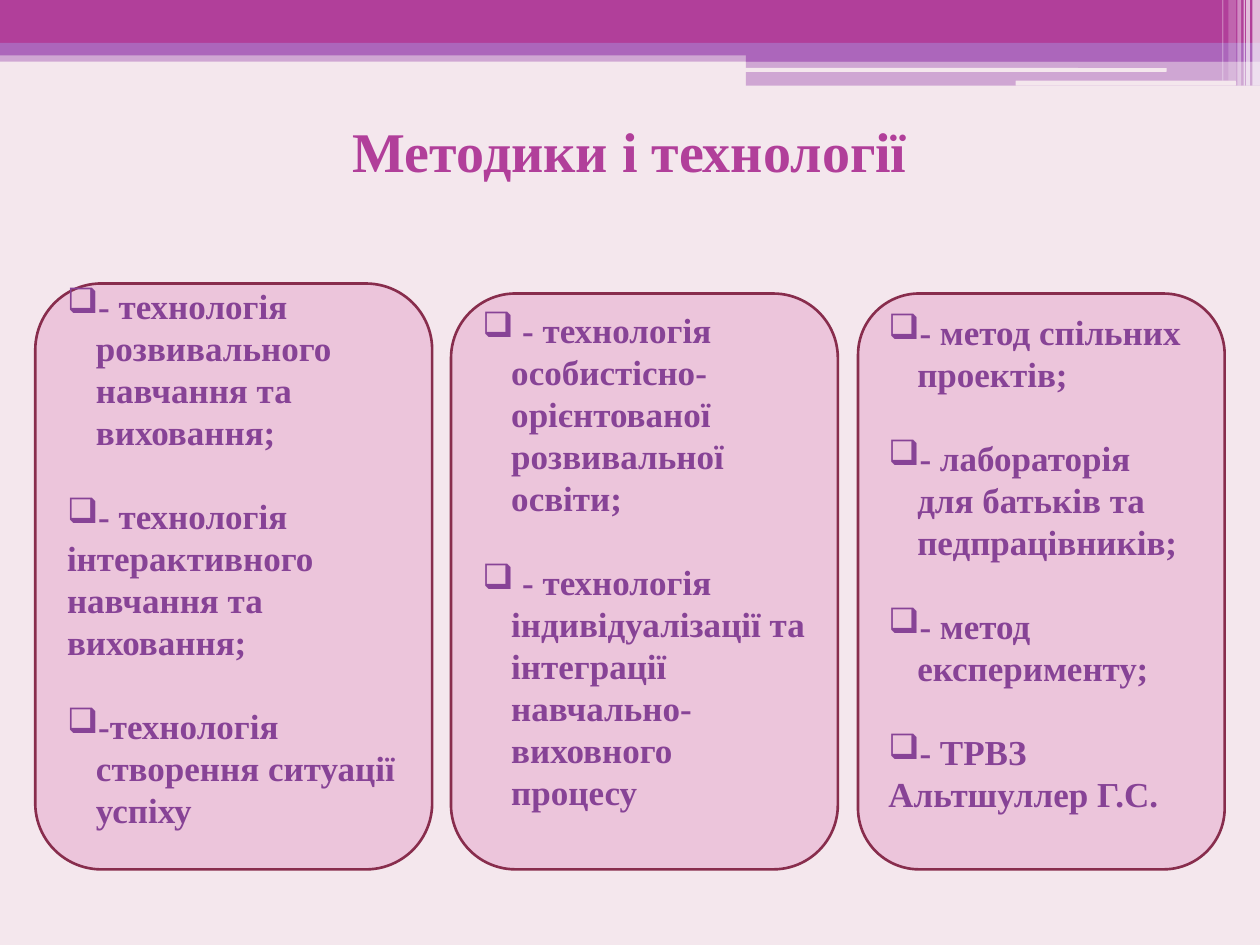
"""Build the slide about teaching methods and technologies."""
from lxml import etree
from pptx import Presentation
from pptx import util as u
from pptx.dml.color import RGBColor
from pptx.enum import shapes, text
from pptx.oxml import ns

BACKGROUND = RGBColor(0xF4, 0xE7, 0xED)
MAGENTA = RGBColor(0xB1, 0x3F, 0x9A)
LILAC = RGBColor(0xAC, 0x66, 0xBB)
WHITE = RGBColor(0xFF, 0xFF, 0xFF)
CARD_FILL = RGBColor(0xEC, 0xC5, 0xDB)
CARD_LINE = RGBColor(0x88, 0x2D, 0x4D)
CARD_TEXT = RGBColor(0x87, 0x43, 0x96)
FONT = "Times New Roman"
HANGING = u.Inches(0.23)
BULLET = "❑"

BANDS = [
    ((0, 0.4, 10, 0.09), LILAC, 50),
    ((0, 0, 10, 0.34), MAGENTA, 100),
    ((0, 0.34, 10, 0.1), LILAC, 100),
    ((5.92, 0.39, 4.08, 0.1), LILAC, 100),
    ((5.92, 0.48, 4.08, 0.2), LILAC, 50),
]
SLOTS = [(5.91, 0.54, 3.35, 0.03), (8.06, 0.64, 1.75, 0.04)]
STRIPES = [
    (9.94, 0.06, 0.68, 65),
    (9.89, 0.03, 0.68, 65),
    (9.87, 0.01, 0.68, 60),
    (9.82, 0.03, 0.68, 40),
    (9.75, 0.06, 0.64, 20),
    (9.7, 0.01, 0.64, 30),
]

# Each paragraph: wording, has a bullet, is followed by a gap
CARDS = [
    ((0.28, 2.25, 3.15, 4.65), 0.35, [
        ("- технологія розвивального навчання та виховання;", True, True),
        ("- технологія", True, False),
        ("інтерактивного навчання та виховання;", False, True),
        ("-технологія створення ситуації успіху", True, False),
    ]),
    ((3.58, 2.33, 3.07, 4.57), 0.38, [
        (" - технологія особистісно-орієнтованої розвивальної освіти;", True, True),
        (" - технологія індивідуалізації та інтеграції навчально-виховного процесу",
         True, False),
    ]),
    ((6.81, 2.33, 2.91, 4.57), 0.35, [
        ("- метод спільних проектів;", True, True),
        ("- лабораторія для батьків та педпрацівників;", True, True),
        ("- метод експерименту;", True, True),
        ("- ТРВЗ", True, False),
        ("Альтшуллер Г.С.", False, False),
    ]),
]


def write(paragraph, wording, size=20, color=CARD_TEXT, align=text.PP_ALIGN.LEFT,
          bullet=False, gap=0, spacing=1.0):
    """Fill a paragraph with one bold run and format it."""
    paragraph.alignment = align
    paragraph.line_spacing = spacing
    paragraph.space_after = u.Pt(gap)
    run = paragraph.add_run()
    run.text = wording
    run.font.name = FONT
    run.font.size = u.Pt(size)
    run.font.bold = True
    run.font.color.rgb = color
    if bullet:
        properties = paragraph._p.get_or_add_pPr()
        properties.set("marL", str(HANGING))
        properties.set("indent", str(-HANGING))
        etree.SubElement(properties, ns.qn("a:buChar")).set("char", BULLET)


class SlideBuilder:
    """Hold the style and the current slide."""

    def __init__(self, slide):
        self.slide = slide
        slide.background.fill.solid()
        slide.background.fill.fore_color.rgb = BACKGROUND

    def block(self, box, color, opacity=100, rounded=False):
        """Add a plain filled rectangle."""
        kind = shapes.MSO_SHAPE.ROUNDED_RECTANGLE if rounded else shapes.MSO_SHAPE.RECTANGLE
        shape = self.slide.shapes.add_shape(kind, *map(u.Inches, box))
        shape.shadow.inherit = False
        shape.fill.solid()
        shape.fill.fore_color.rgb = color
        shape.line.fill.background()
        if opacity < 100:
            tint = shape.fill._xPr.find(".//" + ns.qn("a:srgbClr"))
            etree.SubElement(tint, ns.qn("a:alpha")).set("val", str(opacity * 1000))
        return shape

    def title(self, box, wording):
        """Add the centred heading."""
        frame = self.slide.shapes.add_textbox(*map(u.Inches, box)).text_frame
        frame.word_wrap = True
        frame.vertical_anchor = text.MSO_ANCHOR.MIDDLE
        write(frame.paragraphs[0], wording, size=32, color=MAGENTA,
              align=text.PP_ALIGN.CENTER)

    def card(self, box, bottom, paragraphs):
        """Add a rounded card with a bulleted list."""
        shape = self.block(box, CARD_FILL, rounded=True)
        shape.line.color.rgb = CARD_LINE
        shape.line.width = u.Pt(1.5)
        frame = shape.text_frame
        frame.word_wrap = True
        frame.vertical_anchor = text.MSO_ANCHOR.MIDDLE
        frame.margin_bottom = u.Inches(bottom)
        for index, (wording, bullet, gap) in enumerate(paragraphs):
            paragraph = frame.add_paragraph() if index else frame.paragraphs[0]
            write(paragraph, wording, bullet=bullet, gap=24 if gap else 0, spacing=u.Pt(24))


def main():
    """Create the presentation and save it."""
    presentation = Presentation()
    presentation.slide_width, presentation.slide_height = u.Inches(10), u.Inches(7.5)
    builder = SlideBuilder(presentation.slides.add_slide(presentation.slide_layouts[6]))
    for box, color, opacity in BANDS:
        builder.block(box, color, opacity)
    for box in SLOTS:
        builder.block(box, BACKGROUND, rounded=True)
    for left, width, height, opacity in STRIPES:
        builder.block((left, 0, width, height), WHITE, opacity)
    builder.title((0.5, 0.68, 9, 1.02), "Методики і технології")
    for box, bottom, paragraphs in CARDS:
        builder.card(box, bottom, paragraphs)
    presentation.save("out.pptx")


if __name__ == "__main__":
    main()
